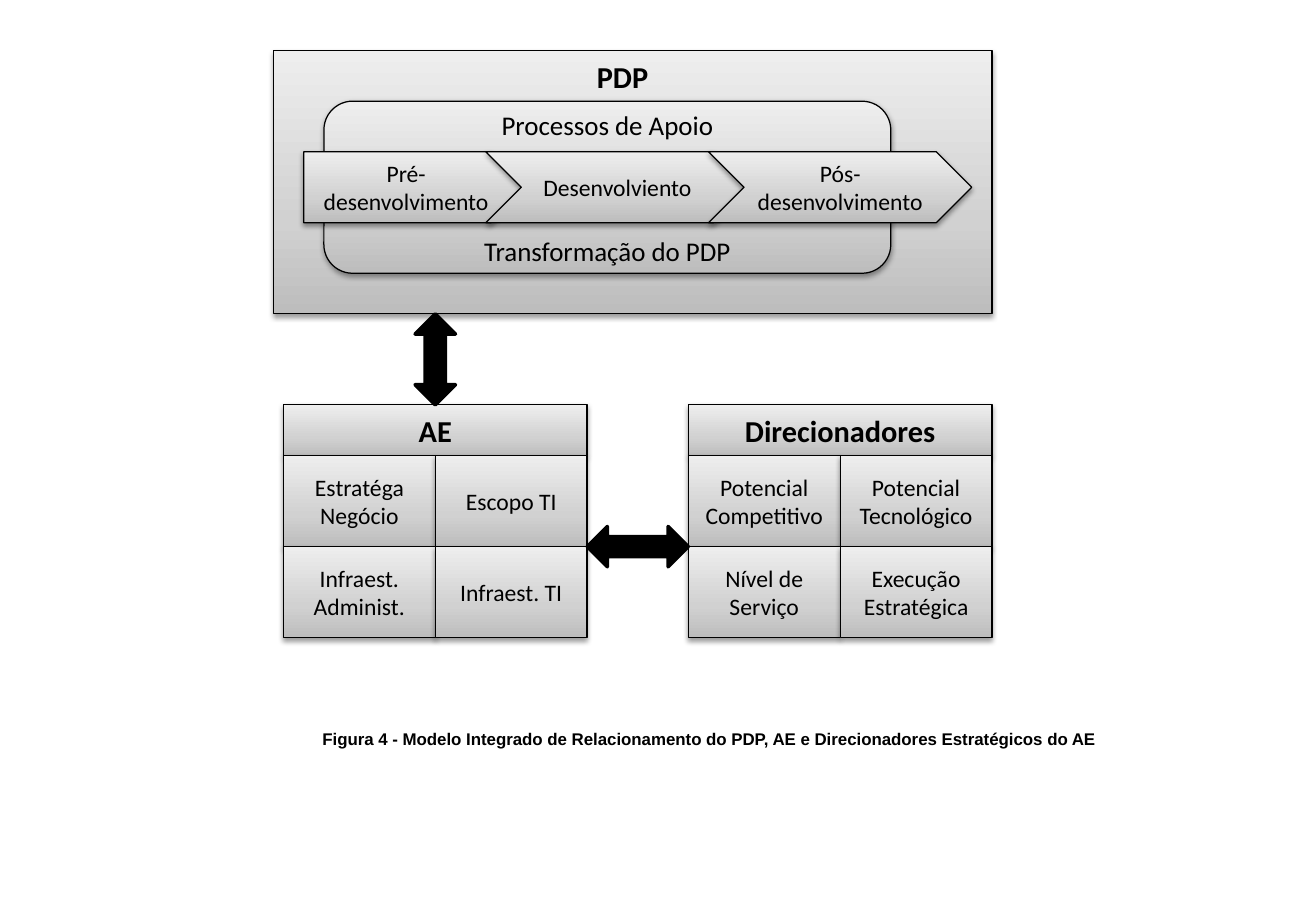
from lxml.etree import SubElement
from pptx import Presentation
from pptx.dml.color import RGBColor
from pptx.enum.shapes import MSO_SHAPE
from pptx.enum.text import MSO_ANCHOR, MSO_AUTO_SIZE, PP_ALIGN
from pptx.oxml.ns import qn
from pptx.util import Pt

COLORS = {"black": "000000", "dark": "BDBDBD", "middle": "D1D1D1", "light": "EEEEEE"}
GRADIENT = [(0, "dark"), (35, "middle"), (100, "light")]

FRAMES = [
    (MSO_SHAPE.RECTANGLE, (162, 30, 426, 156)),
    (MSO_SHAPE.ROUNDED_RECTANGLE, (192, 60, 336, 102)),
]
PHASES = [
    (MSO_SHAPE.PENTAGON, 180, 132, "Pré-desenvolvimento"),
    (MSO_SHAPE.CHEVRON, 288, 156, "Desenvolviento"),
    (MSO_SHAPE.CHEVRON, 420, 156, "Pós-desenvolvimento"),
]
LABELS = [
    ("PDP", (342, 31, 54, 29), 18, True),
    ("Processos de Apoio", (246, 61, 228, 26.6), 16, False),
    ("Transformação do PDP", (246, 135.4, 228, 26.6), 16, False),
]
PANELS = [
    ("AE", 168, ["Estratéga\nNegócio", "Escopo TI", "Infraest.\nAdminist.", "Infraest. TI"]),
    ("Direcionadores", 408, ["Potencial Competitivo", "Potencial Tecnológico",
                             "Nível de Serviço", "Execução Estratégica"]),
]
ARROWS = [((348, 312, 60, 24), 0), ((231, 201, 54, 24), 270)]
CAPTION = "Figura 4 - Modelo Integrado de Relacionamento do PDP, AE e Direcionadores Estratégicos do AE"

PHASE_TOP, PHASE_HEIGHT = 90, 42
PANEL_TOP, HEADER_HEIGHT = 240, 30
CELL_WIDTH, CELL_HEIGHT = 90, 54


def color(name):
    return RGBColor.from_string(COLORS[name])


def write(box, text, size, bold=False, font="Calibri"):
    frame = box.text_frame
    frame.text = text
    for para in frame.paragraphs:
        para.alignment = PP_ALIGN.CENTER
        for span in para.runs:
            span.font.name = font
            span.font.size = Pt(size)
            span.font.bold = bold
            span.font.color.rgb = color("black")


def add_shape(shapes, kind, place, line_width):
    shape = shapes.add_shape(kind, *map(Pt, place))
    shape.shadow.inherit = False
    shape.line.color.rgb = color("black")
    shape.line.width = Pt(line_width)
    return shape


def add_block(shapes, kind, place, text="", size=14, bold=False):
    block = add_shape(shapes, kind, place, 0.75)
    block.fill.gradient()
    block.fill.gradient_angle = 90
    properties = block.element.spPr
    stops = properties.find(".//" + qn("a:gsLst"))
    for stop in list(stops):
        stops.remove(stop)
    for position, name in GRADIENT:
        stop = SubElement(stops, qn("a:gs"), pos=str(position * 1000))
        SubElement(stop, qn("a:srgbClr"), val=COLORS[name])
    shadow = SubElement(properties.find(qn("a:effectLst")), qn("a:outerShdw"),
                        blurRad=str(Pt(3.1)), dist=str(Pt(1.6)), dir="5400000", rotWithShape="0")
    tint = SubElement(shadow, qn("a:srgbClr"), val=COLORS["black"])
    SubElement(tint, qn("a:alpha"), val="38000")
    if text:
        block.text_frame.vertical_anchor = MSO_ANCHOR.MIDDLE
        write(block, text, size, bold)


def add_label(page, text, place, size, bold, font="Calibri", wrap=True):
    box = page.shapes.add_textbox(*map(Pt, place))
    box.text_frame.word_wrap = wrap
    box.text_frame.auto_size = MSO_AUTO_SIZE.SHAPE_TO_FIT_TEXT
    write(box, text, size, bold, font)
    return box


def add_panel(page, title, left, cells):
    shapes = page.shapes.add_group_shape().shapes
    header = (left, PANEL_TOP, 2 * CELL_WIDTH, HEADER_HEIGHT)
    add_block(shapes, MSO_SHAPE.RECTANGLE, header, title, 18, True)
    for index, text in enumerate(cells):
        row, column = divmod(index, 2)
        place = (left + column * CELL_WIDTH, PANEL_TOP + HEADER_HEIGHT + row * CELL_HEIGHT,
                 CELL_WIDTH, CELL_HEIGHT)
        add_block(shapes, MSO_SHAPE.RECTANGLE, place, text)


def main():
    deck = Presentation()
    deck.slide_width, deck.slide_height = Pt(780), Pt(540)
    page = deck.slides.add_slide(deck.slide_layouts[6])
    for kind, place in FRAMES:
        add_block(page.shapes, kind, place)
    for kind, left, width, text in PHASES:
        add_block(page.shapes, kind, (left, PHASE_TOP, width, PHASE_HEIGHT), text)
    for label in LABELS:
        add_label(page, *label)
    for panel in PANELS:
        add_panel(page, *panel)
    for place, rotation in ARROWS:
        arrow = add_shape(page.shapes, MSO_SHAPE.LEFT_RIGHT_ARROW, place, 2)
        arrow.fill.solid()
        arrow.fill.fore_color.rgb = color("black")
        arrow.rotation = rotation
    caption = add_label(page, CAPTION, (60, 420, 720, 36), 10, True, "Arial", False)
    caption.text_frame.vertical_anchor = MSO_ANCHOR.MIDDLE
    deck.save("out.pptx")


if __name__ == "__main__":
    main()
